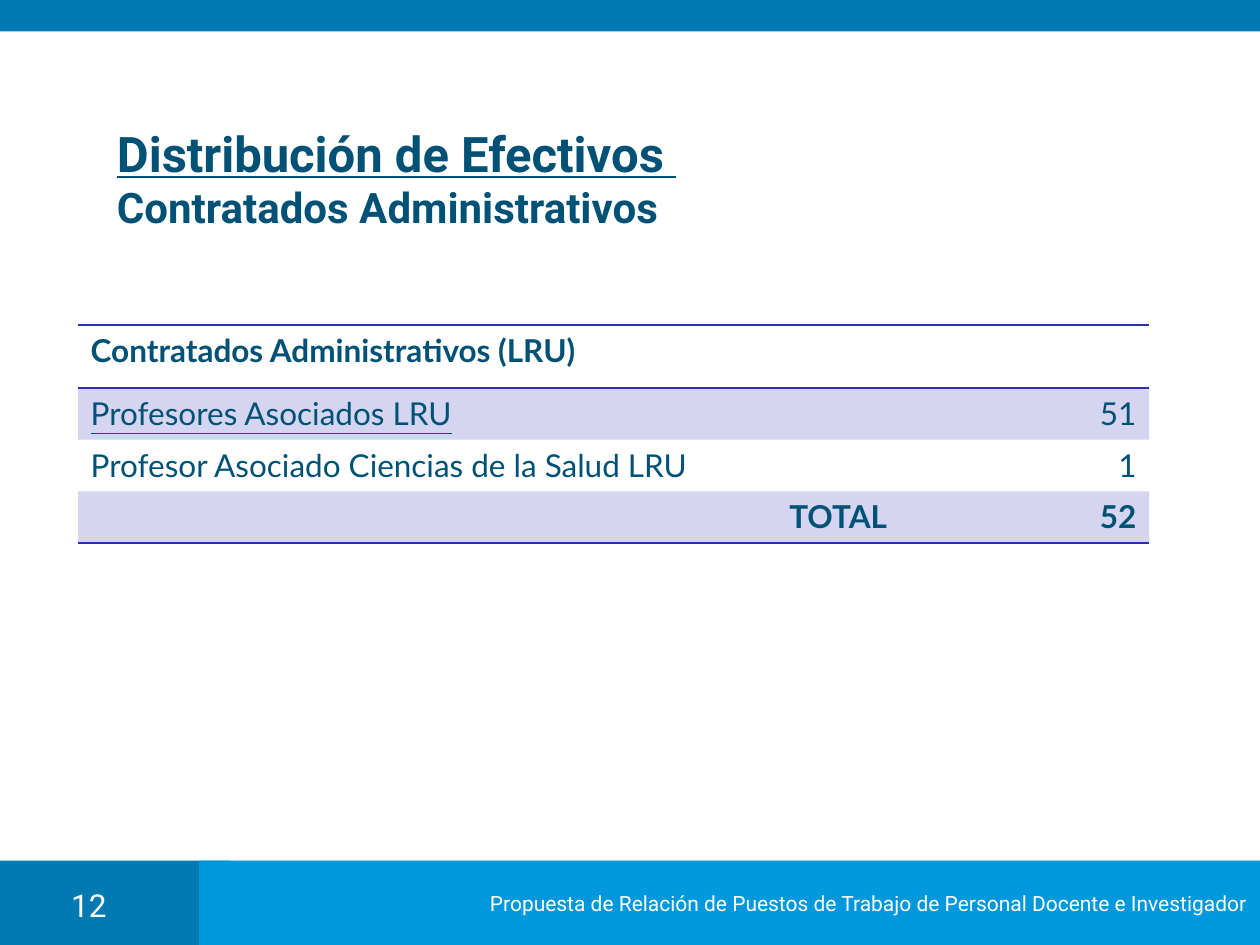
"""Build the slide on the distribution of administrative contract staff."""
from lxml import etree
from pptx import Presentation, util as u
from pptx.dml.color import RGBColor
from pptx.enum import shapes, text
from pptx.oxml import ns

NAVY, DEEP, SKY, INDIGO, WHITE = "005176", "007AB1", "0098DC", "2D2DB9", "FFFFFF"
LEFT, CENTER, RIGHT = text.PP_ALIGN.LEFT, text.PP_ALIGN.CENTER, text.PP_ALIGN.RIGHT
NO_STYLE_NO_GRID = "{2D5ABB26-0587-4C30-8999-92F81FD0307C}"


def paint(fill, colour):
    fill.solid()
    fill.fore_color.rgb = RGBColor.from_string(colour)


def write(frame, words, size=18, font="Roboto", colour=NAVY, bold=False,
          underline=False, align=LEFT, anchor=text.MSO_ANCHOR.TOP, wrap=True):
    frame.word_wrap = wrap
    frame.vertical_anchor = anchor
    paragraph = frame.paragraphs[0]
    paragraph.alignment = align
    if paragraph.runs:
        paragraph.add_line_break()
    run = paragraph.add_run()
    run.text = words
    run.font.size, run.font.name = u.Pt(size), font
    run.font.bold, run.font.underline = bold, underline
    paint(run.font.fill, colour)


deck = Presentation()
deck.slide_width, deck.slide_height = u.Inches(10), u.Inches(7.5)
slide = deck.slides.add_slide(deck.slide_layouts[6])

bands = []
for left, top, width, height, colour in (
    (0, 6.83, 1.83, 0.67, DEEP),
    (1.58, 6.83, 8.42, 0.67, SKY),
    (0, 0, 10, 0.25, DEEP),
):
    band = slide.shapes.add_shape(
        shapes.MSO_SHAPE.RECTANGLE, *map(u.Inches, (left, top, width, height)))
    band.shadow.inherit = False
    paint(band.fill, colour)
    band.line.fill.background()
    bands.append(band)
write(bands[1].text_frame,
      "Propuesta de Relación de Puestos de Trabajo de Personal Docente e Investigador",
      size=12, colour=WHITE, align=RIGHT, anchor=text.MSO_ANCHOR.MIDDLE, wrap=False)

heading = slide.shapes.add_textbox(*map(u.Inches, (0.83, 1.2, 8.35, 0.42))).text_frame
for words, size, underline in (
    ("Distribución de Efectivos ", 28, True),
    ("Contratados Administrativos", 24, False),
):
    write(heading, words, size=size, bold=True, underline=underline,
          anchor=text.MSO_ANCHOR.MIDDLE)

staff = (
    ("Contratados Administrativos (LRU)", ""),
    ("Profesores Asociados LRU", "51"),
    ("Profesor Asociado Ciencias de la Salud LRU", "1"),
    ("TOTAL", "52"),
)
last = len(staff) - 1
headcount = slide.shapes.add_table(
    len(staff), 2, *map(u.Inches, (0.62, 2.58, 8.5, 1.72))).table
headcount.first_row = headcount.horz_banding = False
headcount._tbl.tblPr.find(ns.qn("a:tableStyleId")).text = NO_STYLE_NO_GRID
for column, width in zip(headcount.columns, (6.52, 1.98)):
    column.width = u.Inches(width)

for r, entries in enumerate(staff):
    headcount.rows[r].height = u.Inches(0.41 if r else 0.5)
    edges = {0: ("a:lnT", "a:lnB"), last: ("a:lnB",)}.get(r, ())
    for c, words in enumerate(entries):
        cell = headcount.cell(r, c)
        properties = cell._tc.get_or_add_tcPr()
        if r % 2:
            paint(cell.fill, INDIGO)
            tint = properties.find(".//" + ns.qn("a:srgbClr"))
            etree.SubElement(tint, ns.qn("a:alpha"), val="20000")
        else:
            cell.fill.background()
        for place, edge in enumerate(edges):
            rule = etree.Element(ns.qn(edge), w=str(u.Pt(1)))
            solid = etree.SubElement(rule, ns.qn("a:solidFill"))
            etree.SubElement(solid, ns.qn("a:srgbClr"), val=INDIGO)
            properties.insert(place, rule)
        if words:
            write(cell.text_frame, words, font="Lato", bold=r in (0, last),
                  underline=(r, c) == (1, 0), align=RIGHT if c or r == last else LEFT)

page_number = slide.shapes.add_textbox(*map(u.Inches, (0.35, 6.98, 0.71, 0.32)))
write(page_number.text_frame, "12", colour=WHITE, align=CENTER)

deck.save("out.pptx")
